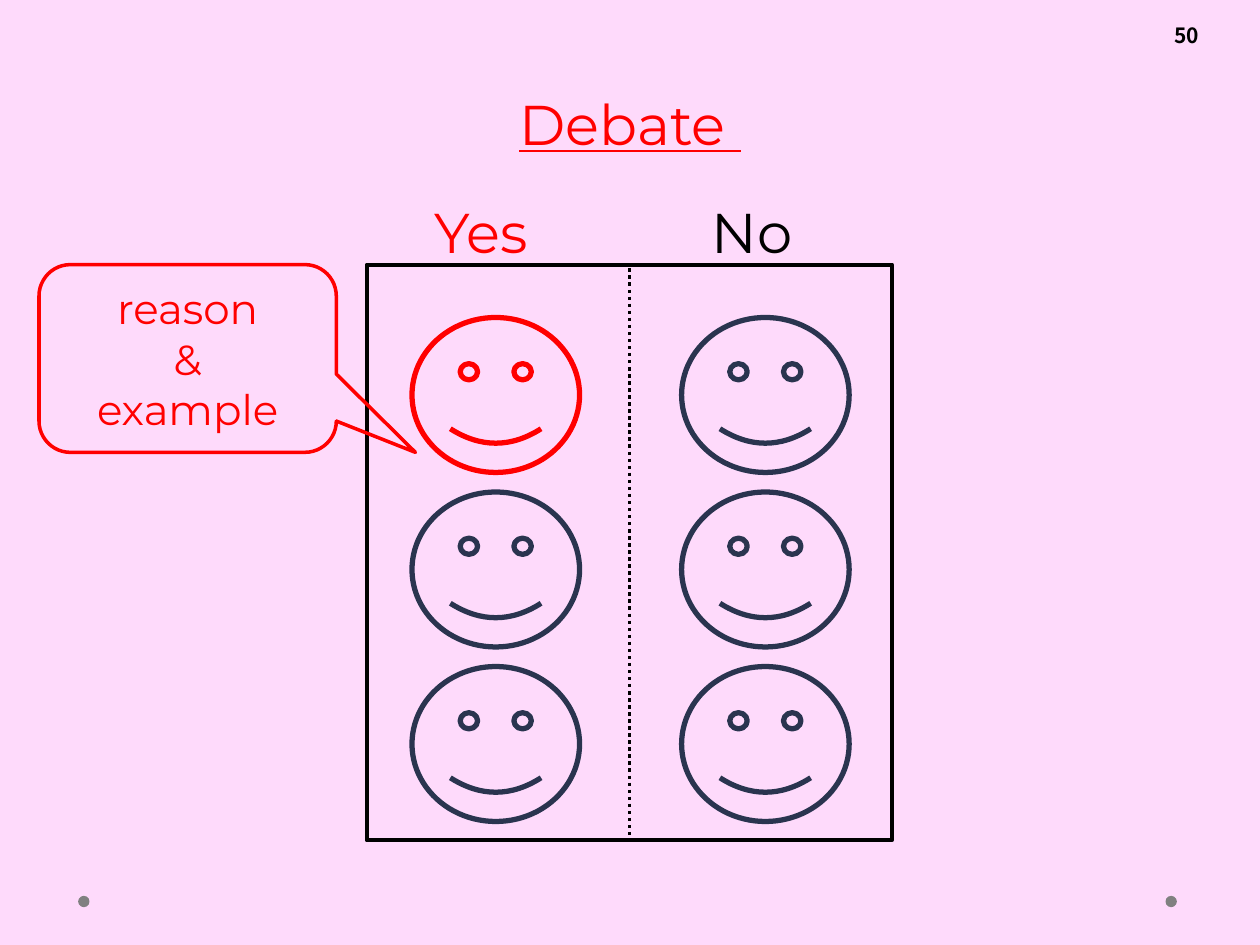
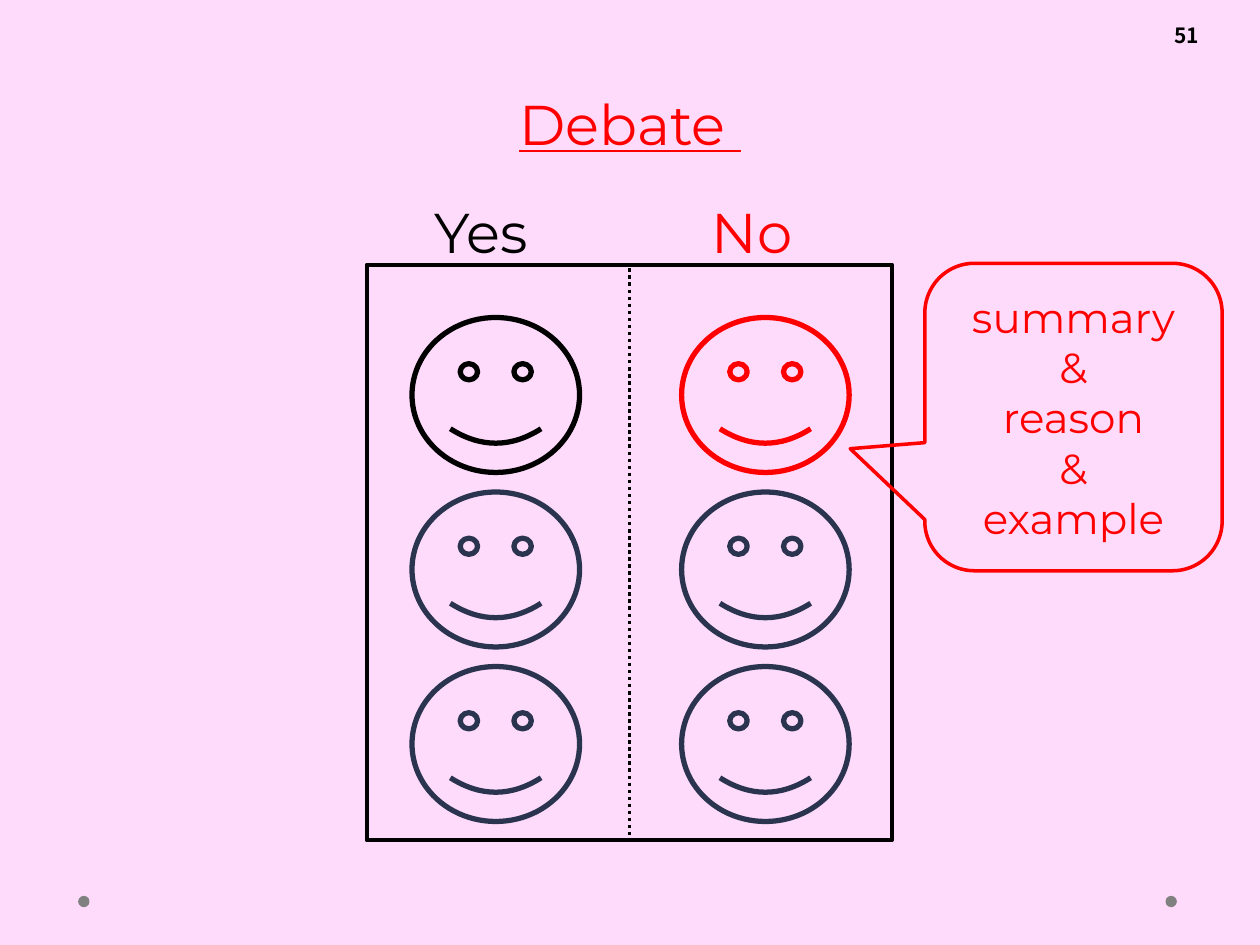
from dataclasses import dataclass
from pptx import Presentation
from pptx.dml.color import RGBColor as RGB
from pptx.enum.dml import MSO_LINE as Dash
from pptx.enum.shapes import MSO_CONNECTOR as Link, MSO_SHAPE as Kind
from pptx.enum.text import MSO_ANCHOR as Anchor, MSO_AUTO_SIZE as Fit, PP_ALIGN as Align
from pptx.oxml.ns import qn
from pptx.util import Inches, Pt
from lxml import etree


@dataclass(frozen=True)
class Theme:
    back: str = "FEDAFB"
    ink: str = "000000"
    hot: str = "FF0000"
    calm: str = "2A344F"
    dot: str = "808080"
    face: str = "Montserrat"
    page: str = "Noto Sans CJK JP"
    head: int = 32
    body: int = 24
    small: int = 12


T = Theme()
SIDES = ("Yes", "No")


def write(frame, lines, size, color, face=T.face, align=Align.CENTER, bold=False):
    frame.word_wrap = True
    frame.auto_size = Fit.NONE
    frame.text = "\n".join(lines)
    for para in frame.paragraphs:
        para.alignment = align
        font = para.font
        font.name, font.size, font.bold = face, Pt(size), bold
        font.color.rgb = RGB.from_string(color)


def place(shape, box):
    shape.left, shape.top, shape.width, shape.height = map(Inches, box)


def label(slide, box, text, size, color, **style):
    frame = slide.shapes.add_textbox(*map(Inches, box)).text_frame
    write(frame, [text], size, color, **style)
    return frame


def draw(slide, kind, box, line=None, width=0, fill=None):
    shape = slide.shapes.add_shape(kind, *map(Inches, box))
    shape.shadow.inherit = False
    if fill:
        shape.fill.solid()
        shape.fill.fore_color.rgb = RGB.from_string(fill)
    else:
        shape.fill.background()
    if line:
        shape.line.color.rgb = RGB.from_string(line)
        shape.line.width = Pt(width)
    else:
        shape.line.fill.background()
    return shape


# Corner dots, page number and title
def add_frame(slide, number):
    for x in (9.25, 0.62):
        draw(slide, Kind.OVAL, (x, 7.11, 0.09, 0.09), fill=T.dot)
    label(slide, (9.22, 0.13, 0.55, 0.3), str(number), T.small, T.ink,
          face=T.page, align=Align.LEFT, bold=True)
    title = slide.shapes.title
    place(title, (0.55, 0.66, 8.9, 0.64))
    write(title.text_frame, ["Debate "], T.head, T.hot)
    title.text_frame.vertical_anchor = Anchor.TOP
    title.text_frame.paragraphs[0].font.underline = True


# Two teams of three speakers, split by a dotted line
def add_board(slide, box, active, lead):
    left, top, width, height = box
    draw(slide, Kind.RECTANGLE, box, T.ink, 2.25)
    for col, side in enumerate(SIDES):
        for row in range(3):
            color = T.calm
            if row == 0:
                color = T.hot if side == active else lead
            spot = (left + 0.36 + 2.14 * col, top + 0.42 + 1.385 * row, 1.33, 1.23)
            draw(slide, Kind.SMILEY_FACE, spot, color, 3)

    mid = left + width / 2
    split = slide.shapes.add_connector(
        Link.STRAIGHT, *map(Inches, (mid, top + 0.03, mid, top + height)))
    split.line.color.rgb = RGB.from_string(T.ink)
    split.line.width = Pt(2)
    split.line.dash_style = Dash.ROUND_DOT
    etree.SubElement(split._element.spPr, qn("a:effectLst"))

    for col, side in enumerate(SIDES):
        spot = (left + 0.24 + 2.15 * col, top - 0.58, 1.57, 0.64)
        frame = label(slide, spot, side, T.head, T.hot if side == active else T.ink)
        frame.margin_right = Inches(0.33)


# Speech bubble with what the speaker must give
def add_bubble(slide, box, tip, lines):
    bubble = draw(slide, Kind.ROUNDED_RECTANGULAR_CALLOUT, box, T.hot, 2)
    for i, value in enumerate((*tip, 0.167)):
        bubble.adjustments[i] = value
    write(bubble.text_frame, lines, T.body, T.hot)
    bubble.text_frame.vertical_anchor = Anchor.MIDDLE


def add_debate(prs, number, active, lead, box, tip, lines):
    slide = prs.slides.add_slide(prs.slide_layouts[5])
    add_frame(slide, number)
    add_board(slide, (2.91, 2.1, 4.17, 4.57), active, lead)
    add_bubble(slide, box, tip, lines)


def main():
    prs = Presentation()
    prs.slide_width, prs.slide_height = Inches(10), Inches(7.5)
    fill = prs.slide_master.background.fill
    fill.solid()
    fill.fore_color.rgb = RGB.from_string(T.back)
    add_debate(prs, 50, "Yes", T.calm, (0.31, 2.1, 2.36, 1.49), (0.766, 0.5),
               ["reason", "&", "example"])
    add_debate(prs, 51, "No", T.ink, (7.34, 2.09, 2.36, 2.44), (-0.751, 0.103),
               ["summary", "&", "reason", "&", "example"])
    prs.save("out.pptx")


if __name__ == "__main__":
    main()
